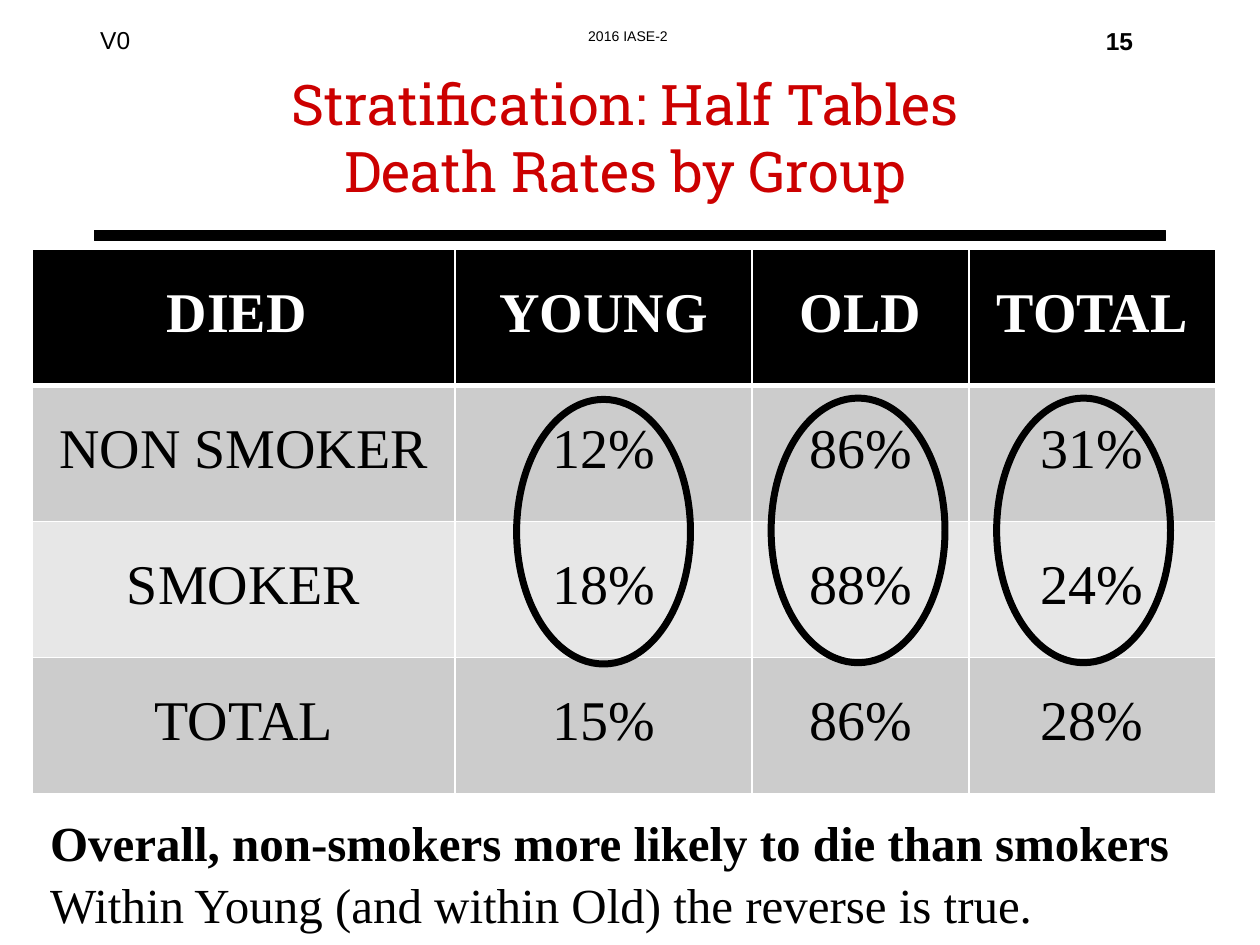
from dataclasses import dataclass

from lxml import etree
from pptx import Presentation
from pptx.dml.color import RGBColor
from pptx.enum import shapes, text
from pptx.oxml import ns
from pptx.util import Inches, Pt

COLOURS = {
    "black": "000000",
    "white": "FFFFFF",
    "red": "CC0000",
    "dark band": "CCCCCC",
    "light band": "E7E7E7",
}
SERIF = "Times New Roman"


@dataclass
class Label:
    content: str
    left: float
    top: float
    width: float
    height: float
    size: float
    font: str = "Arial"
    colour: str = "black"
    bold: bool = False
    centred: bool = True
    middle: bool = False
    space_before: float = 0


@dataclass
class Oval:
    left: float
    top: float
    width: float = 1.38
    height: float = 2.1


LABELS = [
    Label("V0", 0.58, 0.15, 0.67, 0.37, 14),
    Label("2016 IASE-2", 3.62, 0.17, 2.73, 0.25, 8),
    Label("15", 8.55, 0.16, 0.67, 0.37, 14, bold=True),
    Label("Stratification: Half Tables\vDeath Rates by Group",
          0.73, 0.5, 8.47, 1.17, 32, "Roboto Slab", "red", middle=True),
    Label("Overall, non-smokers more likely to die than smokers",
          0.3, 6.4, 9.4, 0.55, 28, SERIF, bold=True, centred=False),
    Label("Within Young (and within Old) the reverse is true.",
          0.3, 6.89, 9.09, 0.55, 28, SERIF, centred=False, space_before=3),
]
DEATH_RATES = [
    ["DIED ", "YOUNG", "OLD", "TOTAL"],
    ["NON SMOKER", "12%", "86%", "31%"],
    ["SMOKER", "18%", "88%", "24%"],
    ["TOTAL", "15%", "86%", "28%"],
]
COLUMN_WIDTHS = [3.35, 2.36, 1.72, 1.96]
ROW_HEIGHT = 1.08
ROW_FILLS = ["black", "dark band", "light band", "dark band"]
OVALS = [Oval(4.1, 3.17), Oval(6.12, 3.16), Oval(7.91, 3.16)]


def rgb(name: str) -> RGBColor:
    return RGBColor.from_string(COLOURS[name])


def format_paragraph(paragraph, size: float, font: str, colour: str,
                     bold: bool, centred: bool = True) -> None:
    paragraph.alignment = text.PP_ALIGN.CENTER if centred else text.PP_ALIGN.LEFT
    for run in paragraph.runs:
        run.font.size = Pt(size)
        run.font.name = font
        run.font.bold = bold
        run.font.color.rgb = rgb(colour)


def add_label(slide, label: Label) -> None:
    box = slide.shapes.add_textbox(Inches(label.left), Inches(label.top),
                                   Inches(label.width), Inches(label.height))
    frame = box.text_frame
    frame.word_wrap = True
    if label.middle:
        frame.vertical_anchor = text.MSO_ANCHOR.MIDDLE
    paragraph = frame.paragraphs[0]
    paragraph.text = label.content
    paragraph.space_before = Pt(label.space_before)
    format_paragraph(paragraph, label.size, label.font, label.colour,
                     label.bold, label.centred)


def add_title_rule(slide) -> None:
    rule = slide.shapes.add_shape(shapes.MSO_SHAPE.RECTANGLE, Inches(0.75),
                                  Inches(1.83), Inches(8.5), Inches(0.08))
    rule.shadow.inherit = False
    rule.fill.solid()
    rule.fill.fore_color.rgb = rgb("black")
    rule.line.color.rgb = rgb("black")
    rule.line.width = Pt(0.75)


def add_oval(slide, oval: Oval) -> None:
    ellipse = slide.shapes.add_shape(shapes.MSO_SHAPE.OVAL, Inches(oval.left),
                                     Inches(oval.top), Inches(oval.width),
                                     Inches(oval.height))
    ellipse.shadow.inherit = False
    ellipse.fill.background()
    ellipse.line.color.rgb = rgb("black")
    ellipse.line.width = Pt(4)


def set_cell_borders(cell, widths: dict[str, float]) -> None:
    """Put white borders ahead of the cell's fill, as the schema requires."""
    properties = cell._tc.get_or_add_tcPr()
    for position, (side, width) in enumerate(widths.items()):
        border = etree.Element(ns.qn(f"a:ln{side}"), w=str(Pt(width)))
        fill = etree.SubElement(border, ns.qn("a:solidFill"))
        etree.SubElement(fill, ns.qn("a:srgbClr"), val=COLOURS["white"])
        properties.insert(position, border)


def add_death_rate_table(slide) -> None:
    row_count = len(DEATH_RATES)
    table = slide.shapes.add_table(
        row_count, len(COLUMN_WIDTHS), Inches(0.26), Inches(1.98),
        Inches(sum(COLUMN_WIDTHS)), Inches(ROW_HEIGHT * row_count)).table
    for column, width in zip(table.columns, COLUMN_WIDTHS):
        column.width = Inches(width)
    for row_index, (row, values) in enumerate(zip(table.rows, DEATH_RATES)):
        row.height = Inches(ROW_HEIGHT)
        header = row_index == 0
        for cell, value in zip(row.cells, values):
            cell.fill.solid()
            cell.fill.fore_color.rgb = rgb(ROW_FILLS[row_index])
            cell.vertical_anchor = text.MSO_ANCHOR.MIDDLE
            paragraph = cell.text_frame.paragraphs[0]
            paragraph.text = value
            paragraph.line_spacing = 0.8
            paragraph.space_before = Pt(6.4)
            format_paragraph(paragraph, 32, SERIF,
                             "white" if header else "black", header)
            set_cell_borders(cell, {"L": 1, "R": 1,
                                    "T": 3 if row_index == 1 else 1,
                                    "B": 3 if header else 1})


def main() -> None:
    presentation = Presentation()
    presentation.slide_width = Inches(10)
    presentation.slide_height = Inches(7.5)
    slide = presentation.slides.add_slide(presentation.slide_layouts[6])
    add_title_rule(slide)
    for label in LABELS:
        add_label(slide, label)
    add_death_rate_table(slide)
    for oval in OVALS:
        add_oval(slide, oval)
    presentation.save("out.pptx")


if __name__ == "__main__":
    main()
